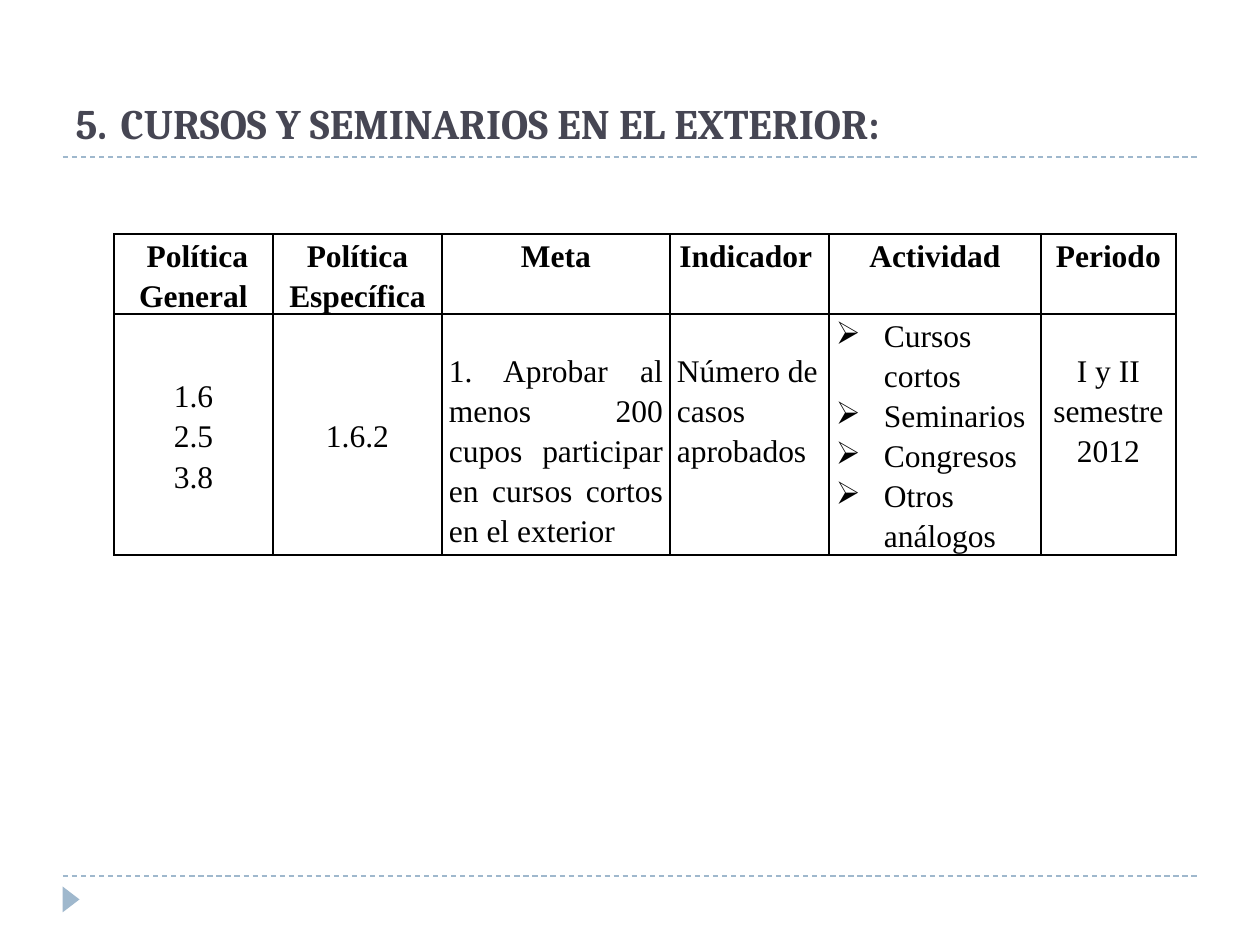
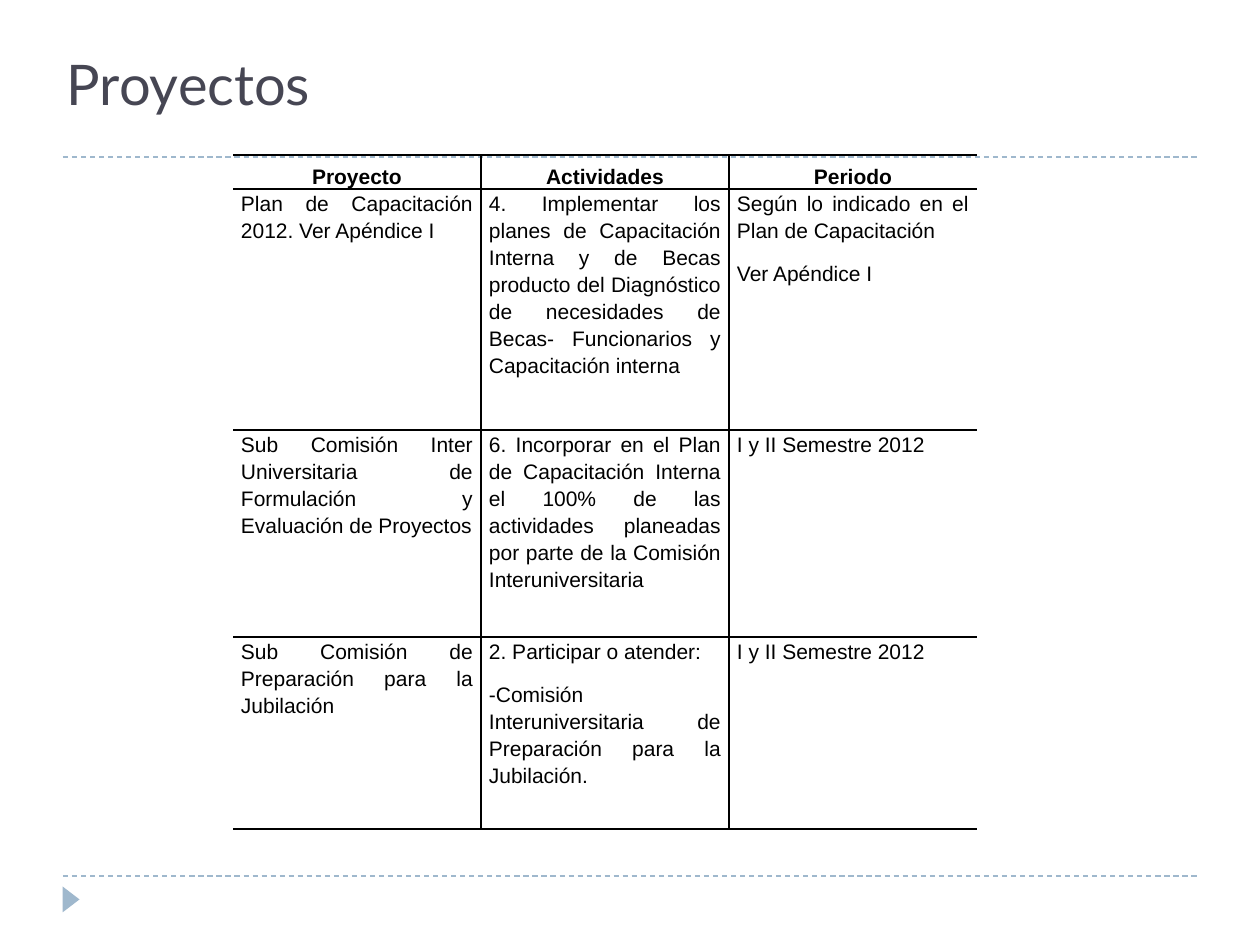
from lxml import etree
from pptx import Presentation
from pptx.dml.color import RGBColor
from pptx.enum.dml import MSO_LINE
from pptx.enum.shapes import MSO_CONNECTOR, MSO_SHAPE
from pptx.enum.text import MSO_ANCHOR, MSO_AUTO_SIZE, PP_ALIGN
from pptx.oxml.ns import qn
from pptx.util import Emu, Pt

PX = 914400 // 126
TITLE_ONLY = 5
STRAIGHT = MSO_CONNECTOR.STRAIGHT
TRIANGLE = MSO_SHAPE.ISOSCELES_TRIANGLE
DASH = MSO_LINE.DASH
NO_FIT = MSO_AUTO_SIZE.NONE
TOP, MIDDLE, BOTTOM = MSO_ANCHOR.TOP, MSO_ANCHOR.MIDDLE, MSO_ANCHOR.BOTTOM
LEFT, CENTER, JUSTIFY = PP_ALIGN.LEFT, PP_ALIGN.CENTER, PP_ALIGN.JUSTIFY

COLORS = {"title": "464653", "accent": "9FB8CD", "text": "000000"}
RULE_LEFT, RULE_RIGHT = 63, 1197
RULE_TOPS = (157, 876)

HEADING = {"name": "Cambria", "size": Pt(24), "bold": True}
HEADING_GAP = {"name": "Lato", "size": Pt(32), "bold": True}
PLAIN_TITLE = {"name": "Lato", "size": Pt(32), "bold": False}

COURSES = {
    "left": 114, "top": 234, "margin": 7,
    "columns": (159, 169, 228, 159, 212, 135), "rows": (80, 241),
    "font": {"name": "Times New Roman", "size": Pt(18)},
    "sides": True, "header_anchor": TOP,
    "header": (" Política\nGeneral", "Política Específica", "Meta",
               "Indicador ", "Actividad", "Periodo"),
    "body": [(
        ("1.6\n2.5\n3.8", {"anchor": MIDDLE, "align": CENTER}),
        ("1.6.2", {"anchor": MIDDLE, "align": CENTER}),
        ("1. Aprobar al menos 200 cupos participar en cursos cortos en el exterior",
         {"align": JUSTIFY, "margin_top": 35}),
        ("Número de casos aprobados", {"align": LEFT, "margin_top": 35}),
        ("Cursos cortos\nSeminarios\nCongresos\nOtros análogos",
         {"align": LEFT, "bullet": "➢"}),
        ("I y II semestre 2012", {"align": CENTER, "margin_top": 35}),
    )],
}

JUSTIFIED = {"align": JUSTIFY, "gap": Pt(9)}
PROJECT_ROWS = (
    ("Plan de Capacitación 2012. Ver Apéndice I",
     "4. Implementar los planes de Capacitación Interna y de Becas producto del "
     "Diagnóstico de necesidades de Becas- Funcionarios y Capacitación interna",
     "Según lo indicado en el Plan de Capacitación\nVer Apéndice I"),
    ("Sub Comisión Inter Universitaria de Formulación y Evaluación de Proyectos",
     "6. Incorporar en el Plan de Capacitación Interna el 100% de las actividades "
     "planeadas por parte de la Comisión Interuniversitaria",
     "I y II Semestre 2012"),
    ("Sub Comisión de Preparación para la Jubilación",
     "2. Participar o atender:\n"
     "-Comisión Interuniversitaria de Preparación para la Jubilación.",
     "I y II Semestre 2012"),
)
PROJECTS = {
    "left": 233, "top": 155, "margin": 8,
    "columns": (248, 248, 248), "rows": (34, 241, 207, 192),
    "font": {"name": "Arial", "size": Pt(12)},
    "sides": False, "header_anchor": BOTTOM,
    "header": ("Proyecto", "Actividades", "Periodo"),
    "body": [[(text, JUSTIFIED) for text in row] for row in PROJECT_ROWS],
}


def px(value):
    return Emu(value * PX)


def rgb(name):
    return RGBColor.from_string(COLORS[name])


def set_values(target, values):
    for name, value in values.items():
        setattr(target, name, value)


def add_run(paragraph, text, font, color):
    run = paragraph.add_run()
    run.text = text
    set_values(run.font, font)
    run.font.color.rgb = rgb(color)


def add_rule(slide, top):
    rule = slide.shapes.add_connector(
        STRAIGHT, px(RULE_LEFT), px(top), px(RULE_RIGHT), px(top))
    set_values(rule.line, {"width": Pt(0.75), "dash_style": DASH})
    rule.line.color.rgb = rgb("accent")
    etree.SubElement(rule.element.spPr, qn("a:effectLst"))


def add_marker(slide):
    marker = slide.shapes.add_shape(TRIANGLE, px(58), px(891), px(26), px(17))
    marker.rotation = 90
    marker.shadow.inherit = False
    marker.fill.solid()
    marker.fill.fore_color.rgb = rgb("accent")
    marker.line.fill.background()


def add_title(slide, box, runs):
    title = slide.shapes.title
    set_values(title, dict(zip(("left", "top", "width", "height"), map(px, box))))
    set_values(title.text_frame, {
        "vertical_anchor": BOTTOM, "auto_size": NO_FIT, "word_wrap": True})
    paragraph = title.text_frame.paragraphs[0]
    paragraph.alignment = LEFT
    for text, font in runs:
        add_run(paragraph, text, font, "title")


def add_slide(presentation, title_box, title_runs):
    slide = presentation.slides.add_slide(presentation.slide_layouts[TITLE_ONLY])
    for top in RULE_TOPS:
        add_rule(slide, top)
    add_marker(slide)
    add_title(slide, title_box, title_runs)
    return slide


def set_borders(cell, hidden):
    properties = cell._tc.get_or_add_tcPr()
    for index, side in enumerate(("lnL", "lnR", "lnT", "lnB")):
        line = etree.Element(qn("a:" + side), w=str(Pt(1)))
        if side in hidden:
            etree.SubElement(line, qn("a:noFill"))
        else:
            fill = etree.SubElement(line, qn("a:solidFill"))
            etree.SubElement(fill, qn("a:srgbClr"), val=COLORS["text"])
        properties.insert(index, line)


def set_bullet(paragraph, character):
    properties = paragraph._p.get_or_add_pPr()
    properties.set("marL", str(px(48)))
    properties.set("indent", str(-px(48)))
    color = etree.SubElement(properties, qn("a:buClr"))
    etree.SubElement(color, qn("a:srgbClr"), val=COLORS["text"])
    etree.SubElement(properties, qn("a:buChar"), char=character)


def fill_cell(cell, text, font, margin, style):
    set_values(cell, {
        "margin_left": px(margin), "margin_right": px(margin),
        "margin_top": px(style.get("margin_top", 0)), "margin_bottom": 0,
        "vertical_anchor": style.get("anchor", TOP)})
    cell.fill.background()
    frame = cell.text_frame
    for index, line in enumerate(text.split("\n")):
        paragraph = frame.add_paragraph() if index else frame.paragraphs[0]
        set_values(paragraph, {"alignment": style["align"], "line_spacing": 1.15})
        if index and "gap" in style:
            paragraph.space_before = style["gap"]
        if "bullet" in style:
            set_bullet(paragraph, style["bullet"])
        add_run(paragraph, line, font, "text")


def add_grid(slide, grid):
    columns, rows = grid["columns"], grid["rows"]
    table = slide.shapes.add_table(
        len(rows), len(columns), px(grid["left"]), px(grid["top"]),
        px(sum(columns)), px(sum(rows))).table
    set_values(table, {"first_row": False, "horz_banding": False})
    for column, width in zip(table.columns, columns):
        column.width = px(width)
    for row, height in zip(table.rows, rows):
        row.height = px(height)
    header_style = {"align": CENTER, "anchor": grid["header_anchor"]}
    header = [(text, header_style) for text in grid["header"]]
    for row_index, row in enumerate([header, *grid["body"]]):
        font = {**grid["font"], "bold": row_index == 0}
        for column_index, (text, style) in enumerate(row):
            cell = table.cell(row_index, column_index)
            fill_cell(cell, text, font, grid["margin"], style)
            hidden = set()
            if not grid["sides"] and column_index == 0:
                hidden.add("lnL")
            if not grid["sides"] and column_index == len(columns) - 1:
                hidden.add("lnR")
            set_borders(cell, hidden)


def main():
    presentation = Presentation()
    presentation.slide_width, presentation.slide_height = px(1260), px(945)
    courses = add_slide(presentation, (63, 21, 1134, 136), [
        ("5.", HEADING), (" ", HEADING_GAP),
        ("CURSOS Y SEMINARIOS EN EL EXTERIOR:", HEADING)])
    add_grid(courses, COURSES)
    projects = add_slide(presentation, (54, -34, 1134, 157), [("Proyectos", PLAIN_TITLE)])
    add_grid(projects, PROJECTS)
    presentation.save("out.pptx")


if __name__ == "__main__":
    main()
